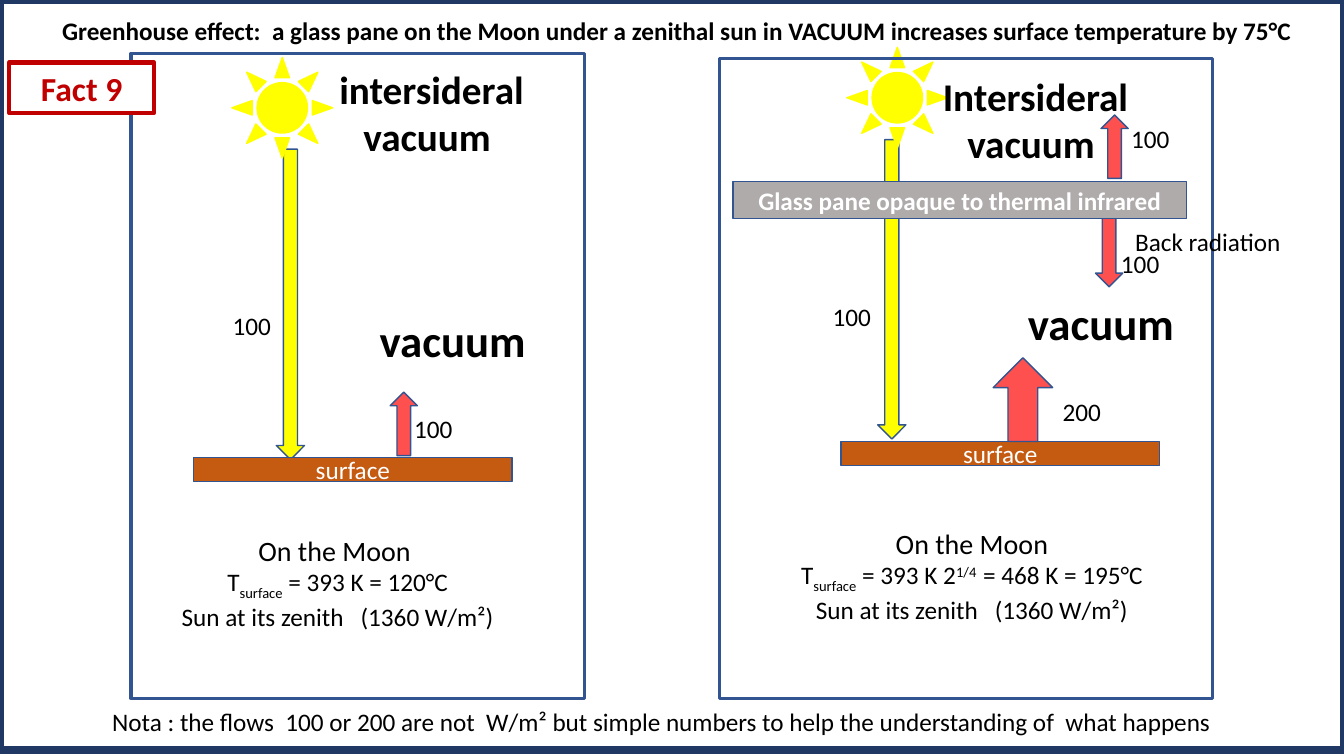
from pptx import Presentation
from pptx.dml.color import RGBColor
from pptx.enum.shapes import MSO_SHAPE
from pptx.enum.text import MSO_ANCHOR, MSO_AUTO_SIZE, PP_ALIGN
from pptx.util import Pt

RECTANGLE = MSO_SHAPE.RECTANGLE
ARROW = MSO_SHAPE.RIGHT_ARROW
SUN = MSO_SHAPE.SUN
LEFT, CENTER = PP_ALIGN.LEFT, PP_ALIGN.CENTER
TOP, MIDDLE = MSO_ANCHOR.TOP, MSO_ANCHOR.MIDDLE
GROW = MSO_AUTO_SIZE.SHAPE_TO_FIT_TEXT
UP, DOWN = 270, 90
SUBSCRIPT, SUPERSCRIPT = -25000, 30000
EMU_PER_PX = 9144

COLORS = {
    "black": "000000",
    "white": "FFFFFF",
    "outline": "325491",
    "frame": "203864",
    "sunlight": "FFFF00",
    "infrared": "FF5050",
    "ground": "C55A11",
    "glass": "AFABAB",
    "fact": "C00000",
}


def px(*lengths):
    return [length * EMU_PER_PX for length in lengths]


def color(name):
    return RGBColor.from_string(COLORS[name])


class MoonSlide:
    font_name = "Calibri"

    def __init__(self, presentation):
        self.slide = presentation.slides.add_slide(presentation.slide_layouts[6])

    def style(self, paragraph, size, ink, bold, align):
        paragraph.alignment = align
        paragraph.font.name = self.font_name
        paragraph.font.size = Pt(size)
        paragraph.font.bold = bold
        paragraph.font.color.rgb = color(ink)

    def shape(self, kind, box, fill=None, line="outline", weight=1, rotation=0):
        shape = self.slide.shapes.add_shape(kind, *px(*box))
        shape.shadow.inherit = False
        shape.rotation = rotation
        if fill:
            shape.fill.solid()
            shape.fill.fore_color.rgb = color(fill)
        else:
            shape.fill.background()
        shape.line.color.rgb = color(line)
        shape.line.width = Pt(weight)
        return shape

    def bar(self, box, text, fill, ink="white", size=18, bold=False,
            line="outline", weight=1, anchor=MIDDLE):
        shape = self.shape(RECTANGLE, box, fill, line, weight)
        frame = shape.text_frame
        frame.vertical_anchor = anchor
        frame.text = text
        self.style(frame.paragraphs[0], size, ink, bold, CENTER)

    def arrow(self, box, fill, rotation):
        self.shape(ARROW, box, fill, rotation=rotation)

    def text_frame(self, box, wrap):
        frame = self.slide.shapes.add_textbox(*px(*box)).text_frame
        frame.word_wrap = wrap
        frame.auto_size = GROW
        return frame

    def label(self, box, text, size=18, bold=False, align=LEFT):
        frame = self.text_frame(box, True)
        frame.text = text
        self.style(frame.paragraphs[0], size, "black", bold, align)

    def moon_note(self, box, heading, temperature):
        frame = self.text_frame(box, False)
        lines = [
            (20, [(heading, 0)]),
            (18, [("T", 0), ("surface", SUBSCRIPT)] + temperature),
            (18, [("Sun at its zenith   (1360 W/m²)", 0)]),
        ]
        for index, (size, runs) in enumerate(lines):
            paragraph = frame.add_paragraph() if index else frame.paragraphs[0]
            self.style(paragraph, size, "black", False, CENTER)
            for text, baseline in runs:
                run = paragraph.add_run()
                run.text = text
                if baseline:
                    run.font._element.set("baseline", str(baseline))

    def panel(self, frame, sun, sunbeam, surface, sky, sky_text, vacuum):
        self.arrow(sunbeam, "sunlight", DOWN)
        self.shape(SUN, sun + (100, 100), "sunlight", "sunlight")
        self.bar(surface + (316, 24), "surface", "ground")
        self.label(sky + (274, 104), sky_text, 28, True, CENTER)
        self.label(vacuum + (274, 64), "vacuum", 32, True, CENTER)
        self.shape(RECTANGLE, frame, weight=2.25)


def main():
    presentation = Presentation()
    presentation.slide_width, presentation.slide_height = px(1333, 750)
    moon = MoonSlide(presentation)

    moon.panel(frame=(714, 58, 489, 635), sun=(840, 47),
               sunbeam=(736, 273, 297, 28), surface=(834, 438),
               sky=(890, 67), sky_text="Intersideral vacuum ",
               vacuum=(955, 288))
    moon.panel(frame=(130, 53, 450, 640), sun=(230, 57),
               sunbeam=(134, 288, 308, 28), surface=(192, 454),
               sky=(291, 60), sky_text="intersideral vacuum ",
               vacuum=(312, 305))

    for box, rotation in [
        ((1066, 237, 68, 27), DOWN),
        ((973, 367, 83, 59), UP),
        ((1074, 132, 63, 27), UP),
        ((369, 407, 63, 27), UP),
    ]:
        moon.arrow(box, "infrared", rotation)

    for left, top, flow in [
        (816, 294, "100"),
        (1102, 241, "100"),
        (1044, 388, "200"),
        (1112, 117, "100"),
        (401, 405, "100"),
        (221, 303, "100"),
    ]:
        moon.label((left, top, 74, 40), flow)
    moon.label((1116, 220, 190, 40), "Back radiation")

    moon.moon_note((778, 517, 372, 104), "On the Moon",
                   [(" = 393 K 2", 0), ("1/4  ", SUPERSCRIPT),
                    ("= 468 K = 195°C", 0)])
    moon.moon_note((168, 524, 334, 104), "On the Moon ",
                   [(" = 393 K = 120°C", 0)])

    moon.label((38, 10, 1273, 40),
               "Greenhouse effect:  a glass pane on the Moon under a zenithal sun "
               "in VACUUM increases surface temperature by 75°C ",
               bold=True, align=CENTER)
    moon.label((30, 696, 1264, 40),
               "Nota : the flows  100 or 200 are not  W/m² but simple numbers "
               "to help the understanding of  what happens  ", align=CENTER)
    moon.bar((9, 62, 144, 50), "Fact 9", "white", "fact", 24, True,
             line="fact", weight=3, anchor=TOP)
    moon.bar((727, 180, 450, 37), "Glass pane opaque to thermal infrared",
             "glass", bold=True)
    moon.shape(RECTANGLE, (0, 0, 1333, 744), line="frame", weight=6)

    presentation.save("out.pptx")


if __name__ == "__main__":
    main()
